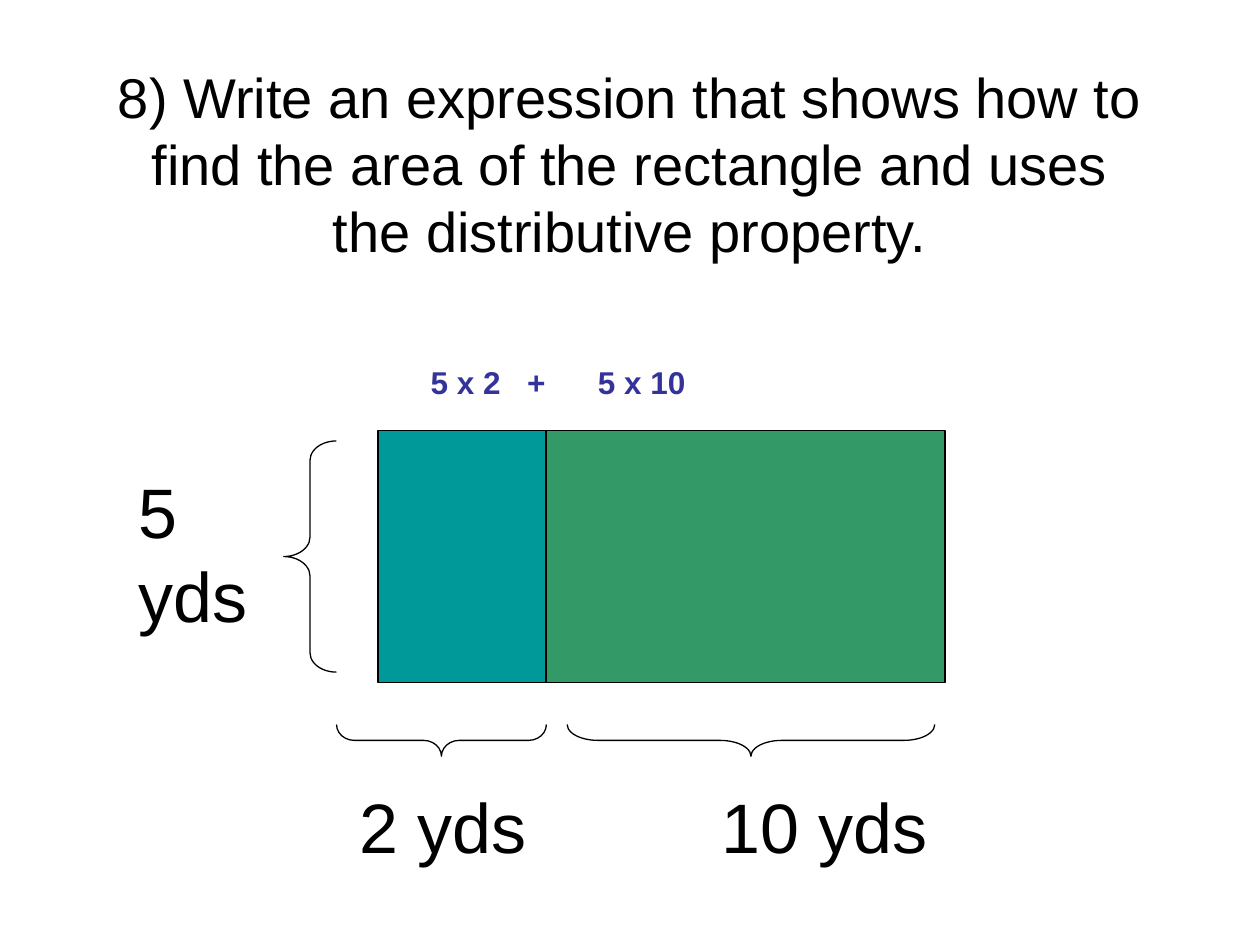
from dataclasses import dataclass

from pptx import Presentation
from pptx import util as u
from pptx.dml.color import RGBColor
from pptx.enum import shapes, text


@dataclass(frozen=True)
class Theme:
    font: str = "Arial"
    ink: str = "000000"
    sum: str = "333399"
    teal: str = "009999"
    green: str = "339966"
    head: int = 32
    label: int = 40
    note: int = 18
    line: float = 0.75


class Page:
    """Draws styled elements on one slide, with lengths in centimetres."""

    def __init__(self, slide, theme):
        self.slide = slide
        self.theme = theme

    def run(self, par, words, size, color, bold=False, gap=0):
        run = par.add_run()
        run.text = words
        font = run.font
        font.name, font.size, font.bold = self.theme.font, u.Pt(size), bold
        font.color.rgb = RGBColor.from_string(color)
        if gap:
            run._r.get_or_add_rPr().set("spc", str(gap * 100))

    def title(self, words, *box):
        shape = self.slide.shapes.title
        shape.left, shape.top, shape.width, shape.height = map(u.Cm, box)
        frame = shape.text_frame
        frame.auto_size = text.MSO_AUTO_SIZE.NONE
        frame.vertical_anchor = text.MSO_ANCHOR.MIDDLE
        par = frame.paragraphs[0]
        par.alignment = text.PP_ALIGN.CENTER
        self.run(par, words, self.theme.head, self.theme.ink)

    def frame(self, *box):
        frame = self.slide.shapes.add_textbox(*map(u.Cm, box)).text_frame
        frame.word_wrap = True
        return frame

    def label(self, words, *box, inset=0.25):
        frame = self.frame(*box)
        frame.margin_left = u.Cm(inset)
        self.run(frame.paragraphs[0], words, self.theme.label, self.theme.ink)

    def term(self, parts, *box):
        par = self.frame(*box).paragraphs[0]
        par.alignment = text.PP_ALIGN.CENTER
        for words, gap in parts:
            self.run(par, words, self.theme.note, self.theme.sum, True, gap)

    def shape(self, kind, *box):
        shape = self.slide.shapes.add_shape(kind, *map(u.Cm, box))
        shape.shadow.inherit = False
        shape.line.color.rgb = RGBColor.from_string(self.theme.ink)
        shape.line.width = u.Pt(self.theme.line)
        return shape

    def area(self, color, *box):
        fill = self.shape(shapes.MSO_SHAPE.RECTANGLE, *box).fill
        fill.solid()
        fill.fore_color.rgb = RGBColor.from_string(color)

    def brace(self, curve, *box, turn=0):
        shape = self.shape(shapes.MSO_SHAPE.LEFT_BRACE, *box)
        shape.fill.background()
        shape.adjustments[0] = curve
        shape.rotation = turn


def main():
    deck = Presentation()
    deck.slide_width, deck.slide_height = u.Cm(25.4), u.Cm(19.05)
    theme = Theme()
    page = Page(deck.slides.add_slide(deck.slide_layouts[5]), theme)

    page.title(
        "8) Write an expression that shows how to find the area of the "
        "rectangle and uses the distributive property.",
        1.9, 1.7, 21.6, 3.18,
    )

    left, top, high = 7.62, 8.68, 5.08
    short, long = 3.39, 8.04
    page.area(theme.teal, left, top, short, high)
    page.area(theme.green, left + short, top, long, high)

    page.label("5 yds", 2.54, 9.32, 3.18, 3.63)
    page.label("2 yds", 6.99, 15.67, 4.24, 1.96)
    page.label("10 yds", 13.13, 15.67, 7.83, 1.96, inset=1.42)

    page.brace(0.37, 5.72, 8.89, 1.06, 4.66)
    page.brace(0.97, 14.82, 11.22, 0.64, 7.41, turn=270)
    page.brace(0.56, 8.58, 12.81, 0.64, 4.23, turn=270)

    page.term([("5 x 2", 0), (" ", 10), ("+", 0)], 7.83, 7.2, 4.02, 1.27)
    page.term([("5 x 10", 0)], 10.5, 7.2, 4.87, 1.27)

    deck.save("out.pptx")


if __name__ == "__main__":
    main()
